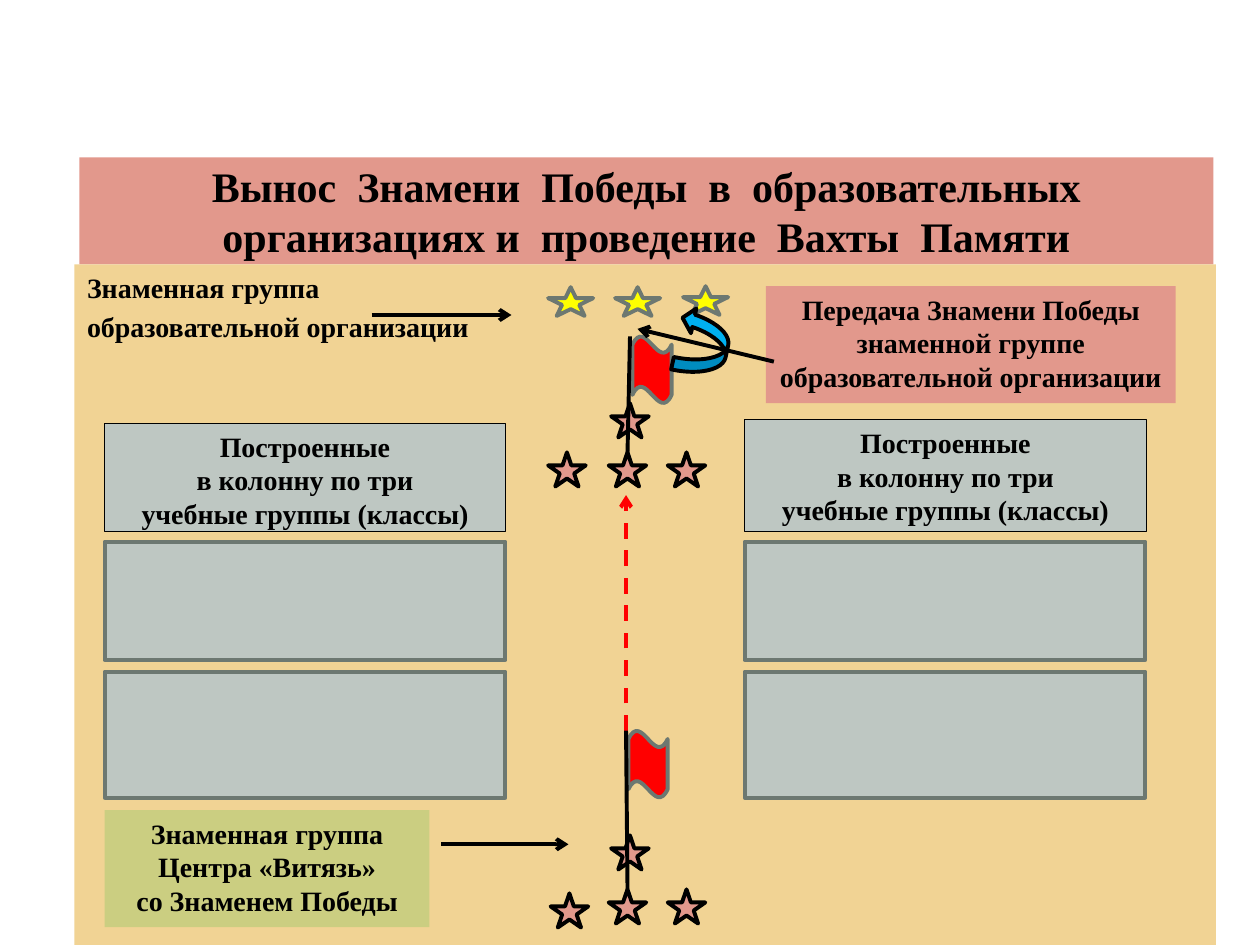
from lxml.etree import SubElement
from pptx import Presentation
from pptx.dml.color import RGBColor
from pptx.enum.dml import MSO_LINE_DASH_STYLE as Dash
from pptx.enum.shapes import MSO_CONNECTOR, MSO_SHAPE as Preset
from pptx.enum.text import MSO_ANCHOR as Anchor, MSO_AUTO_SIZE as AutoSize, PP_ALIGN as Align
from pptx.oxml.ns import qn
from pptx.util import Cm, Pt

FONT = "Times New Roman"
BLACK, RED, YELLOW, BLUE = "000000", "FF0000", "FFFF00", "00B0F0"
PINK, SAND, OLIVE, GRAY, SLATE = "E2988C", "F1D394", "CBCE81", "BEC7C2", "6D7871"
STAR_SIZE, YELLOW_STAR_SIZE, FLAG_SIZE = (0.76, 0.69), (0.91, 0.58), (0.79, 1.35)
COLUMN_TEXT = ["Построенные", "в колонну по три", "учебные группы (классы)"]


def color(hex_code):
    return RGBColor.from_string(hex_code)


def paint(shape, fill):
    shape.fill.solid()
    shape.fill.fore_color.rgb = color(fill)


def write(shape, lines, size=16, align=Align.CENTER, anchor=Anchor.TOP, gap=0):
    """Put one paragraph per line into the shape, in bold black type."""
    frame = shape.text_frame
    frame.text = "\n".join(lines)
    frame.word_wrap = True
    frame.auto_size = AutoSize.NONE
    frame.vertical_anchor = anchor
    for index, paragraph in enumerate(frame.paragraphs):
        paragraph.alignment = align
        paragraph.space_before = Pt(gap if index else 0)
        for run in paragraph.runs:
            run.font.name = FONT
            run.font.size = Pt(size)
            run.font.bold = True
            run.font.color.rgb = color(BLACK)


def fill_placeholder(placeholder, box, fill, lines, **text_format):
    placeholder.left, placeholder.top, placeholder.width, placeholder.height = map(Cm, box)
    paint(placeholder, fill)
    write(placeholder, lines, **text_format)


def remove_bullets(placeholder):
    for paragraph in placeholder.text_frame.paragraphs:
        properties = paragraph._p.get_or_add_pPr()
        properties.set("marL", "0")
        properties.set("indent", "0")
        SubElement(properties, qn("a:buNone"))


def add_figure(slide, preset, box, fill, line=None, width=2.25):
    shape = slide.shapes.add_shape(preset, *map(Cm, box))
    shape.shadow.inherit = False
    paint(shape, fill)
    if line:
        shape.line.color.rgb = color(line)
        shape.line.width = Pt(width)
    else:
        shape.line.fill.background()
    return shape


def add_label(slide, box, fill, lines, line=None):
    write(add_figure(slide, Preset.RECTANGLE, box, fill, line, width=0.5), lines)


def add_line(slide, start, end, line=BLACK, dash=None, arrow=True):
    connector = slide.shapes.add_connector(MSO_CONNECTOR.STRAIGHT, *map(Cm, start + end))
    connector.line.color.rgb = color(line)
    connector.line.width = Pt(2.25)
    if dash:
        connector.line.dash_style = dash
    if arrow:
        SubElement(connector.line._get_or_add_ln(), qn("a:tailEnd"), type="arrow")
    SubElement(connector._element.spPr, qn("a:effectLst"))


def add_banner_groups(slide):
    """Stars of both banner groups, with their flags."""
    for position in [(12.27, 17.93), (13.46, 17.93), (11.1, 18.01), (12.32, 16.84),
                     (12.32, 8.13), (12.27, 9.12), (11.05, 9.12), (13.46, 9.12)]:
        add_figure(slide, Preset.STAR_5_POINT, position + STAR_SIZE, PINK, BLACK)
    for position in [(12.75, 6.78), (12.67, 14.73)]:
        add_figure(slide, Preset.WAVE, position + FLAG_SIZE, RED, SLATE)
    add_line(slide, (12.62, 14.73), (12.62, 9.98), RED, Dash.DASH)
    for position in [(13.77, 5.77), (11.05, 5.79), (12.4, 5.79)]:
        add_figure(slide, Preset.STAR_5_POINT, position + YELLOW_STAR_SIZE, YELLOW, SLATE)


def add_turn_arrow(slide):
    arrow = add_figure(slide, Preset.CURVED_UP_ARROW, (13.51, 6.4, 1.32, 1.02), BLUE, BLACK)
    arrow.rotation = 282.4
    for index, value in enumerate([0.25, 0.5, 0.23]):
        arrow.adjustments[index] = value


def main():
    presentation = Presentation()
    presentation.slide_width, presentation.slide_height = Cm(25.4), Cm(19.05)
    slide = presentation.slides.add_slide(presentation.slide_layouts[1])
    title, body = slide.placeholders

    fill_placeholder(title, (1.6, 3.17, 22.86, 2.16), PINK,
                     ["Вынос  Знамени  Победы  в  образовательных "
                      "организациях и  проведение  Вахты  Памяти"],
                     size=24, anchor=Anchor.MIDDLE)
    fill_placeholder(body, (1.5, 5.33, 23.01, 13.72), SAND,
                     ["Знаменная группа", "образовательной организации"],
                     align=Align.LEFT, gap=3.2)
    remove_bullets(body)

    add_banner_groups(slide)
    add_label(slide, (2.11, 16.33, 6.55, 2.36), OLIVE,
              ["Знаменная группа", "Центра «Витязь»", "со Знаменем Победы"])
    add_line(slide, (7.49, 6.35), (10.31, 6.35))
    add_line(slide, (8.89, 17.02), (11.46, 17.02))
    add_turn_arrow(slide)
    add_label(slide, (15.44, 5.77, 8.26, 2.36), PINK,
              ["Передача Знамени Победы знаменной группе образовательной организации"])
    add_label(slide, (2.11, 8.53, 8.08, 2.18), GRAY, COLUMN_TEXT, BLACK)
    add_label(slide, (15.01, 8.46, 8.1, 2.26), GRAY, COLUMN_TEXT, BLACK)

    add_line(slide, (12.62, 14.73), (12.65, 17.93), arrow=False)
    add_line(slide, (12.7, 6.78), (12.65, 9.12), arrow=False)
    for left in (2.11, 15.01):
        for top, height in [(10.92, 2.39), (13.54, 2.54)]:
            add_figure(slide, Preset.RECTANGLE, (left, top, 8.08, height), GRAY, SLATE)
    add_line(slide, (15.6, 7.29), (12.85, 6.63))

    presentation.save("out.pptx")


if __name__ == "__main__":
    main()
